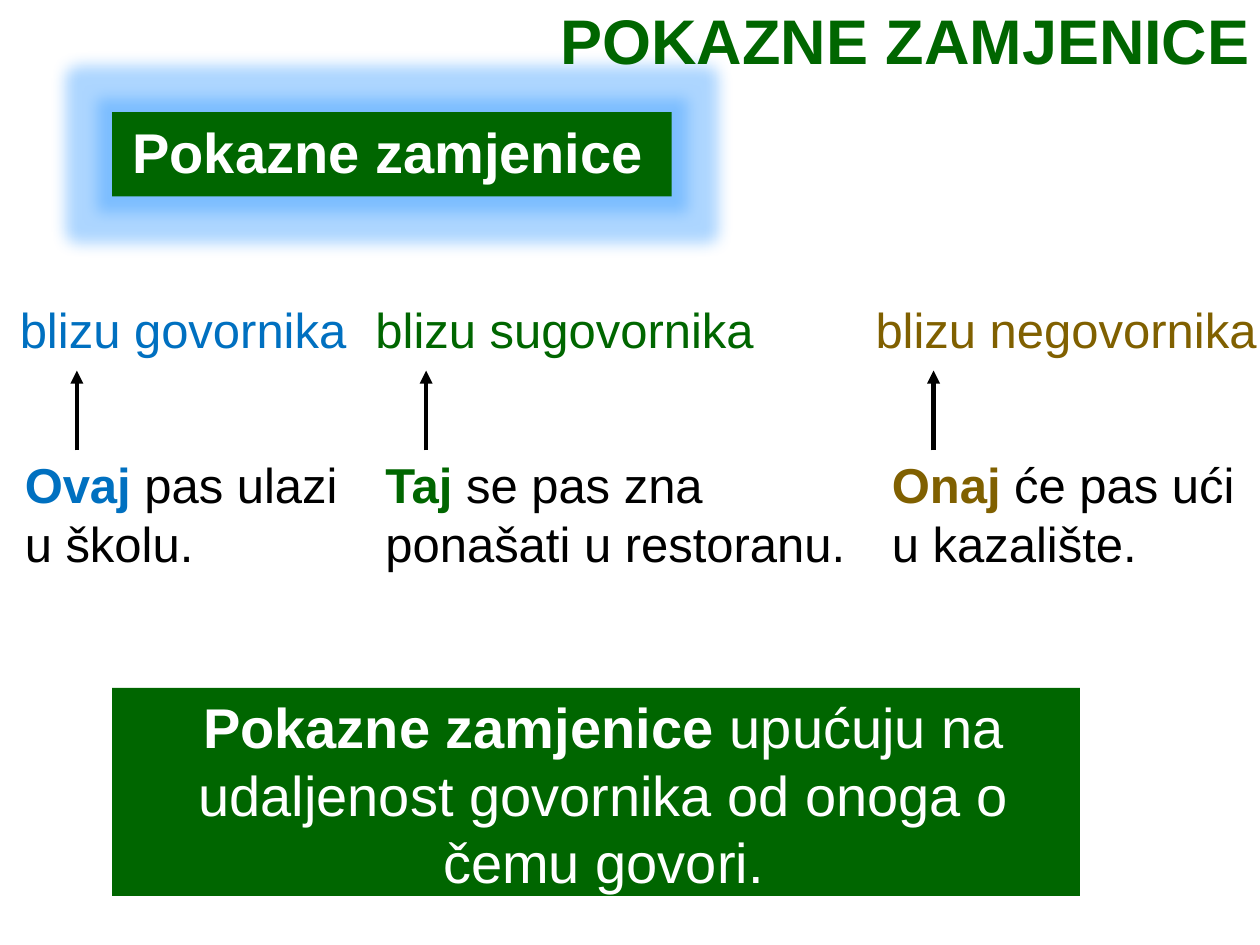
import pptx
import pptx.util
import pptx.dml.color
import pptx.enum.shapes
import pptx.enum.text
import pptx.oxml
import lxml.etree
from pptx.util import Cm

C = {"green": "006600", "blue": "0070C0", "brown": "806000",
     "black": "000000", "white": "FFFFFF", "glow": "3399FF"}
A = pptx.oxml.ns.nsdecls("a")
ALIGN = pptx.enum.text.PP_ALIGN
ANCHOR = pptx.enum.text.MSO_ANCHOR

prs = pptx.Presentation()
prs.slide_width, prs.slide_height = Cm(25.4), Cm(19.05)
s = prs.slides.add_slide(prs.slide_layouts[6])


def add_bar(x, y, w, h):
    sp = s.shapes.add_shape(pptx.enum.shapes.MSO_SHAPE.RECTANGLE, Cm(x), Cm(y), Cm(w), Cm(h))
    sp.shadow.inherit = False
    sp.fill.solid()
    sp.fill.fore_color.rgb = pptx.dml.color.RGBColor.from_string(C["green"])
    sp.line.fill.background()
    return sp


def add_text(x, y, w, h, paragraphs, size, align=ALIGN.LEFT, wrap=True):
    tf = s.shapes.add_textbox(Cm(x), Cm(y), Cm(w), Cm(h)).text_frame
    tf.word_wrap = wrap
    if not wrap:
        tf.auto_size = pptx.enum.text.MSO_AUTO_SIZE.SHAPE_TO_FIT_TEXT
    for i, runs in enumerate(paragraphs):
        p = tf.add_paragraph() if i else tf.paragraphs[0]
        p.alignment = align
        p.font.name = "Arial"
        p.font.size = pptx.util.Pt(size)
        for words, color, bold in runs:
            r = p.add_run()
            r.text = words
            r.font.bold = bold
            r.font.color.rgb = pptx.dml.color.RGBColor.from_string(C[color])
    return tf


sp = add_bar(2.26, 2.26, 11.28, 1.7)
effects = sp._element.spPr.find(pptx.oxml.ns.qn("a:effectLst"))
effects.append(pptx.oxml.parse_xml(
    f'<a:glow {A} rad="228600"><a:srgbClr val="{C["glow"]}">'
    '<a:alpha val="40000"/></a:srgbClr></a:glow>'))
heading = add_text(2.49, 1.7, 10.69, 2.13, [[("Pokazne zamjenice", "white", True)]], 32)
heading.vertical_anchor = ANCHOR.BOTTOM

tf = add_text(4.04, -0.23, 21.41, 1.93, [[("POKAZNE ZAMJENICE", "green", True)]], 36, ALIGN.RIGHT)
tf.vertical_anchor = ANCHOR.BOTTOM
tf.paragraphs[0].line_spacing = 0.9

columns = [
    ("blue", 0.15, 7.19, "blizu govornika", 1.55,
     0.25, 7.16, "Ovaj ", "pas ulazi", "u školu."),
    ("green", 7.32, 8.23, "blizu sugovornika", 8.59,
     7.52, 9.91, "Taj ", "se pas zna", "ponašati u restoranu."),
    ("brown", 17.4, 8.31, "blizu negovornika", 18.82,
     17.73, 7.49, "Onaj ", "će pas ući", "u kazalište."),
]
for color, label_x, label_w, label, arrow_x, x, w, pronoun, rest, ending in columns:
    add_text(x, 9.04, w, 2.64,
             [[(pronoun, color, True), (rest, "black", False)], [(ending, "black", False)]],
             28, wrap=False)
    add_text(label_x, 5.92, label_w, 1.45, [[(label, color, False)]], 28, wrap=False)
    cx = s.shapes.add_connector(pptx.enum.shapes.MSO_CONNECTOR.STRAIGHT,
                                Cm(arrow_x), Cm(9.08), Cm(arrow_x), Cm(7.47))
    cx.line.width = pptx.util.Pt(2.5)
    cx.line.color.rgb = pptx.dml.color.RGBColor.from_string(C["black"])
    lxml.etree.SubElement(cx.line._get_or_add_ln(), pptx.oxml.ns.qn("a:tailEnd"), type="triangle")
    lxml.etree.SubElement(cx._element.spPr, pptx.oxml.ns.qn("a:effectLst"))

add_bar(2.26, 13.87, 19.51, 4.19)
rule = add_text(2.57, 13.87, 19.2, 2.74,
                [[("Pokazne zamjenice ", "white", True),
                  ("upućuju na udaljenost govornika od onoga o čemu govori.", "white", False)]],
                32, ALIGN.CENTER)

for tf in (heading, rule):
    tf.margin_left = tf.margin_right = Cm(0.18)
    tf.margin_top = tf.margin_bottom = Cm(0.1)
    tf.paragraphs[0].space_before = pptx.util.Pt(10)

prs.save("out.pptx")
